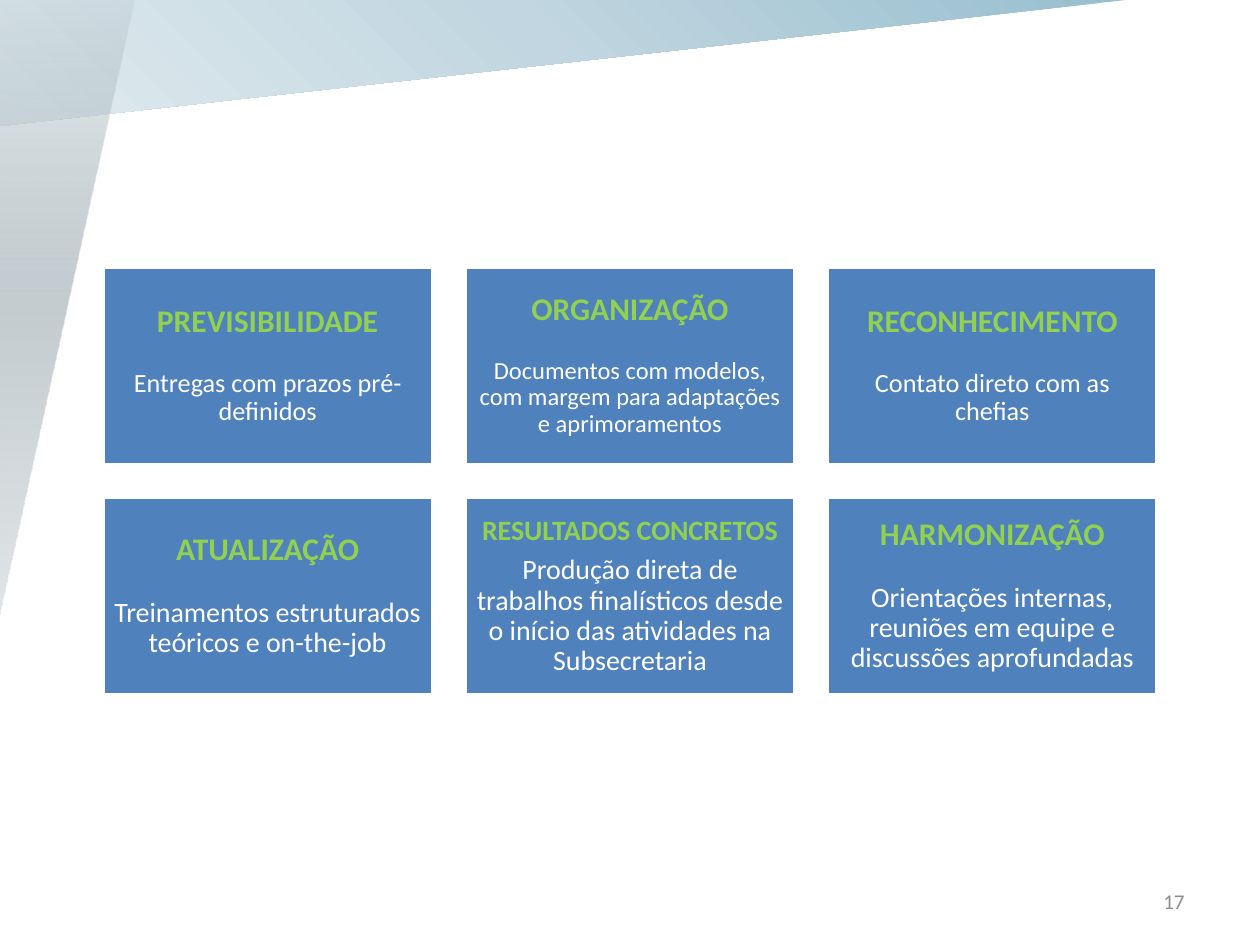
from dataclasses import dataclass

from pptx import Presentation
from pptx.dml.color import RGBColor
from pptx.enum import shapes, text
from pptx.oxml import ns, parse_xml
from pptx.util import Pt

PX = 914400 / 126


@dataclass(frozen=True)
class Theme:
    font: str = "Calibri"
    card: str = "4F81BD"
    white: str = "FFFFFF"
    heading: str = "92D050"
    number: str = "8C8C8C"
    number_size: int = 12
    line_spacing: float = 0.9
    # Gradient stops: position %, colour, opacity %
    top_band: tuple = ((0, "98BFCF", 100), (50, "C1D6E0", 100), (100, "E1EBEF", 100))
    left_band: tuple = ((0, "9CADB4", 15), (50, "C4CCD0", 100), (100, "E2E6E8", 100))


THEME = Theme()

# Heading, heading size, gap after heading, body, body size
CARDS = [
    ("PREVISIBILIDADE", 18, 17.5, "Entregas com prazos pré-definidos", 15),
    ("ORGANIZAÇÃO", 18, 17.5,
     "Documentos com modelos, com margem para adaptações e aprimoramentos", 14),
    ("RECONHECIMENTO", 18, 17.5, "Contato direto com as chefias", 15),
    ("ATUALIZAÇÃO", 18, 17.5, "Treinamentos estruturados teóricos e on-the-job", 16),
    ("RESULTADOS CONCRETOS", 16, 5.5,
     "Produção direta de trabalhos finalísticos desde o início das atividades "
     "na Subsecretaria", 16),
    ("HARMONIZAÇÃO", 18, 17.5,
     "Orientações internas, reuniões em equipe e discussões aprofundadas", 16),
]


def emu(*lengths):
    return [round(length * PX) for length in lengths]


def style(para, size, color, align, bold=False):
    para.alignment = align
    for span in para.runs:
        span.font.name = THEME.font
        span.font.size = Pt(size)
        span.font.bold = bold
        span.font.color.rgb = RGBColor.from_string(color)


def add_wedge(page, box, rotation, stops, angle, flip=False):
    """Gradient right triangle that fills the box after its rotation."""
    left, top, width, height = box
    if rotation == 90:
        left, top = left + (width - height) / 2, top + (height - width) / 2
        width, height = height, width
    wedge = page.shapes.add_shape(
        shapes.MSO_SHAPE.RIGHT_TRIANGLE, *emu(left, top, width, height))
    wedge.rotation = rotation
    wedge.shadow.inherit = False
    wedge.line.fill.background()
    wedge.fill.background()
    properties = wedge._element.spPr
    if flip:
        properties.xfrm.set("flipH", "1")
    marks = "".join(
        f'<a:gs pos="{position * 1000}"><a:srgbClr val="{color}">'
        f'<a:alpha val="{opacity * 1000}"/></a:srgbClr></a:gs>'
        for position, color, opacity in stops)
    gradient = parse_xml(
        f'<a:gradFill {ns.nsdecls("a")} rotWithShape="1"><a:gsLst>{marks}</a:gsLst>'
        f'<a:lin ang="{angle * 60000}" scaled="0"/></a:gradFill>')
    properties.replace(properties.find(ns.qn("a:noFill")), gradient)


def add_background(page, box):
    left, top, _, _ = box
    add_wedge(page, (left, top, 1126, 126), 90, THEME.top_band, 45)
    add_wedge(page, (left - 1, top, 135, 621), 180, THEME.left_band, 270, flip=True)


def add_card(page, box, heading, heading_size, gap, body, body_size):
    card = page.shapes.add_shape(shapes.MSO_SHAPE.RECTANGLE, *emu(*box))
    card.shadow.inherit = False
    card.fill.solid()
    card.fill.fore_color.rgb = RGBColor.from_string(THEME.card)
    card.line.color.rgb = RGBColor.from_string(THEME.white)
    card.line.width = Pt(2)

    frame = card.text_frame
    frame.word_wrap = True
    frame.vertical_anchor = text.MSO_ANCHOR.MIDDLE
    inset = emu(9)[0]
    frame.margin_left = frame.margin_right = inset
    frame.margin_top = frame.margin_bottom = inset
    frame.text = f"{heading}\n{body}"
    title, detail = frame.paragraphs
    style(title, heading_size, THEME.heading, text.PP_ALIGN.CENTER, bold=True)
    style(detail, body_size, THEME.white, text.PP_ALIGN.CENTER)
    title.line_spacing = detail.line_spacing = THEME.line_spacing
    title.space_after = Pt(gap)


def add_card_grid(page, box, columns=3, gap_x=33, gap_y=33):
    left, top, width, height = box
    rows = len(CARDS) // columns
    card_width = (width - gap_x * (columns - 1)) / columns
    card_height = (height - gap_y * (rows - 1)) / rows
    for index, card in enumerate(CARDS):
        row, column = divmod(index, columns)
        place = (left + column * (card_width + gap_x),
                 top + row * (card_height + gap_y), card_width, card_height)
        add_card(page, place, *card)


def add_page_number(page, box, number):
    frame = page.shapes.add_textbox(*emu(*box)).text_frame
    frame.word_wrap = True
    frame.vertical_anchor = text.MSO_ANCHOR.MIDDLE
    frame.text = number
    style(frame.paragraphs[0], THEME.number_size, THEME.number, text.PP_ALIGN.RIGHT)


def main():
    deck = Presentation()
    deck.slide_width, deck.slide_height = emu(1260, 945)
    page = deck.slides.add_slide(deck.slide_layouts[6])

    add_background(page, (0, 0, 1260, 945))
    add_card_grid(page, (103, 267, 1054, 428))
    add_page_number(page, (903, 876, 294, 50), "17")
    deck.save("out.pptx")


if __name__ == "__main__":
    main()
